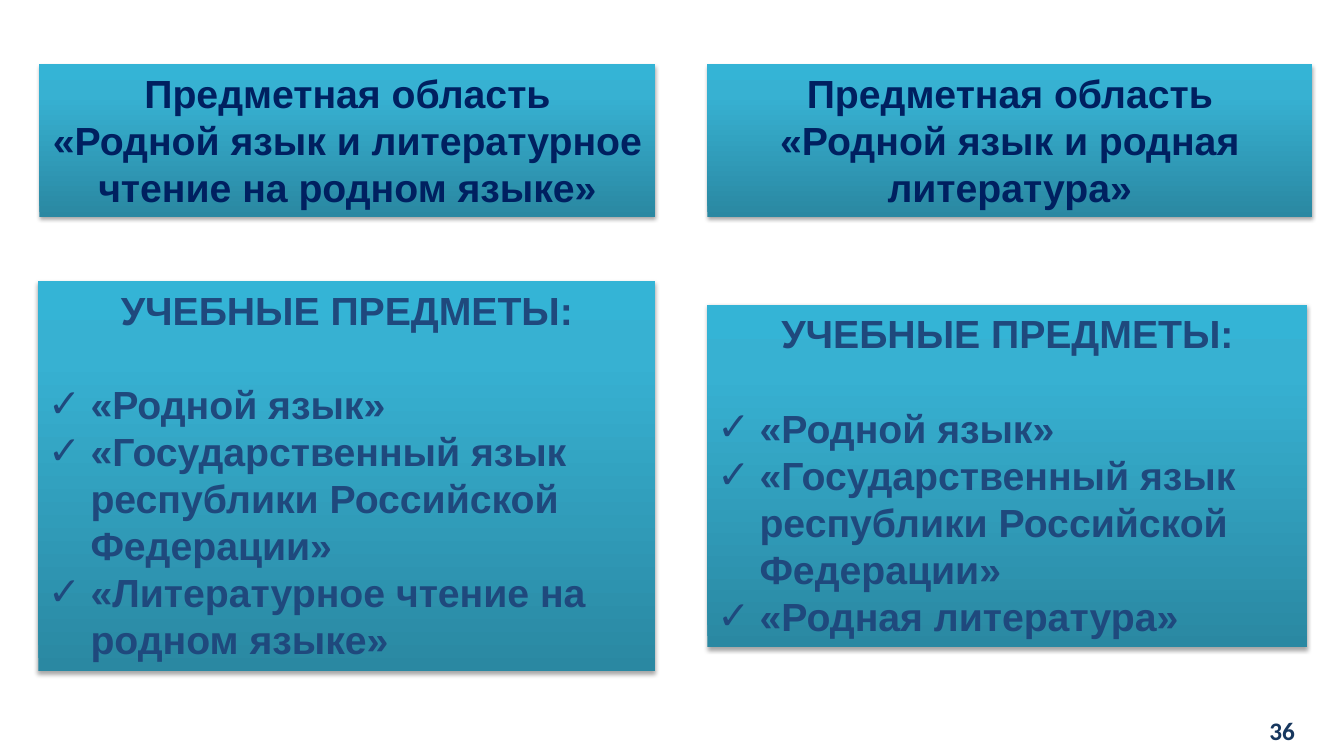
from copy import deepcopy

from lxml.etree import SubElement
from pptx import Presentation
from pptx.dml.color import RGBColor as RGB
from pptx.enum.shapes import MSO_SHAPE as SHAPE
from pptx.enum.text import MSO_ANCHOR as ANCHOR, MSO_AUTO_SIZE as AUTO, PP_ALIGN as ALIGN
from pptx.oxml.ns import qn
from pptx.util import Inches, Pt

COLORS = {"title": "002060", "body": "1F497D", "number": "17375E",
          "deep": "2A88A2", "mid": "37B1D2", "light": "34B4D6", "shadow": "000000"}
GRADIENT = [(0, "deep"), (0.8, "mid"), (1, "light")]


class SlideBuilder:
    """Holds the style and the current slide; boxes are in percent of the slide."""
    font, size, indent = "Arial", 28, Inches(0.42)

    def __init__(self, prs):
        self.width, self.height = prs.slide_width, prs.slide_height
        self.s = prs.slides.add_slide(prs.slide_layouts[6])

    def place(self, x, y, w, h):
        return [int(share * side / 100) for share, side in
                zip((x, y, w, h), (self.width, self.height) * 2)]

    def style(self, p, color, align, font=None, size=None):
        p.alignment = align
        for r in p.runs:
            r.font.name, r.font.size = font or self.font, Pt(size or self.size)
            r.font.bold, r.font.color.rgb = True, RGB.from_string(COLORS[color])

    def check_mark(self, p):
        pPr = p._p.get_or_add_pPr()
        pPr.set("marL", str(self.indent))
        pPr.set("indent", str(-self.indent))
        SubElement(pPr, qn("a:buFont"), typeface="Arial")
        SubElement(pPr, qn("a:buChar"), char="✓")

    def panel(self, box):
        sp = self.s.shapes.add_shape(SHAPE.RECTANGLE, *self.place(*box))
        sp.line.fill.background()
        # Three-stop gradient, dark at the bottom
        sp.fill.gradient()
        sp.fill.gradient_angle = 90
        stops = sp._element.spPr.find(f".//{qn('a:gsLst')}")
        stops.append(deepcopy(stops[-1]))
        for stop, (position, color) in zip(sp.fill.gradient_stops, GRADIENT):
            stop.position, stop.color.rgb = position, RGB.from_string(COLORS[color])
        # Soft shadow below
        sp.shadow.inherit = False
        effects = sp._element.spPr.find(qn("a:effectLst"))
        shadow = SubElement(effects, qn("a:outerShdw"), blurRad=str(Pt(3.1)),
                            dist=str(Pt(1.8)), dir="5400000", rotWithShape="0")
        tint = SubElement(shadow, qn("a:srgbClr"), val=COLORS["shadow"])
        SubElement(tint, qn("a:alpha"), val="35000")
        tf = sp.text_frame
        tf.word_wrap, tf.auto_size = True, AUTO.SHAPE_TO_FIT_TEXT
        tf.vertical_anchor = ANCHOR.TOP
        return tf

    def area(self, box, name):
        tf = self.panel(box)
        tf.text = f"Предметная область\n{name}"
        for p in tf.paragraphs:
            self.style(p, "title", ALIGN.CENTER)

    def subjects(self, box, names):
        tf = self.panel(box)
        tf.text = "\n".join(["УЧЕБНЫЕ ПРЕДМЕТЫ:", *names])
        heading, *items = tf.paragraphs
        self.style(heading, "body", ALIGN.CENTER)
        heading.space_after = Pt(33.6)
        for p in items:
            self.style(p, "body", ALIGN.LEFT)
            self.check_mark(p)

    def number(self, box, text):
        tf = self.s.shapes.add_textbox(*self.place(*box)).text_frame
        tf.word_wrap, tf.vertical_anchor = True, ANCHOR.MIDDLE
        tf.margin_left = tf.margin_right = Inches(0.12)
        tf.margin_top = tf.margin_bottom = Inches(0.06)
        tf.text = text
        self.style(tf.paragraphs[0], "number", ALIGN.RIGHT, "Calibri", 18)


def main():
    prs = Presentation()
    prs.slide_width, prs.slide_height = Inches(13.33), Inches(7.5)
    slide = SlideBuilder(prs)
    native = "«Родной язык»"
    state = "«Государственный язык республики Российской Федерации»"

    # Left column
    slide.area((2.93, 8.53, 45.84, 20.13),
               "«Родной язык и литературное чтение на родном языке»")
    slide.subjects((2.85, 37.2, 45.91, 51.6),
                   [native, state, "«Литературное чтение на родном языке»"])

    # Right column
    slide.area((52.63, 8.53, 45.01, 20.13), "«Родной язык и родная литература»")
    slide.subjects((52.63, 40.32, 44.64, 45.33),
                   [native, state, "«Родная литература»"])

    # Slide number
    slide.number((89.38, 94, 7.88, 5.33), "36")
    prs.save("out.pptx")


if __name__ == "__main__":
    main()
